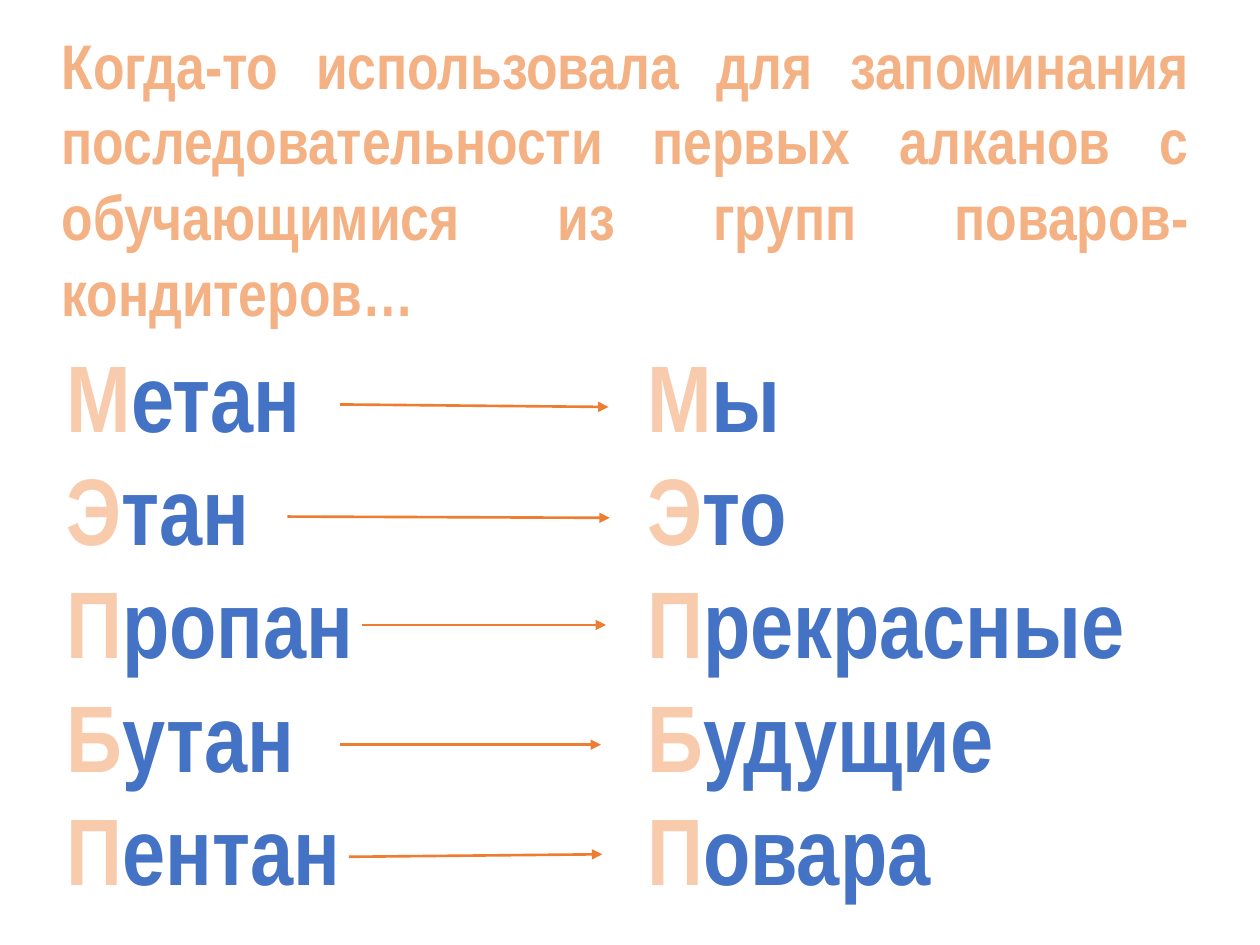
from dataclasses import dataclass

from lxml import etree
from pptx import Presentation
from pptx import util as u
from pptx.dml.color import RGBColor
from pptx.enum import shapes, text
from pptx.oxml import ns
from pptx.util import Inches


@dataclass(frozen=True)
class Theme:
    font: str = "Arial Narrow"
    title: str = "F4B183"
    initial: str = "F8CBAD"
    word: str = "4472C4"
    accent: str = "ED7D31"
    edge: str = "FFFFFF"
    title_size: int = 36
    word_size: int = 54


T = Theme()

TITLE = ("Когда-то использовала для запоминания последовательности первых "
         "алканов с обучающимися из групп поваров-кондитеров…")
# alkane, mnemonic word, arrow start (x, y), arrow end (x, y)
ROWS = [
    ("Метан", "Мы", (2.7, 3.21), (4.83, 3.23)),
    ("Этан", "Это", (2.28, 4.1), (4.84, 4.11)),
    ("Пропан", "Прекрасные", (2.87, 4.96), (4.81, 4.96)),
    ("Бутан", "Будущие", (2.7, 5.91), (4.77, 5.91)),
    ("Пентан", "Повара", (2.77, 6.8), (4.78, 6.78)),
]


def add_run(p, words, size, color, edge, edge_width):
    """Add a bold run whose letters have a coloured outline."""
    r = p.add_run()
    r.text = words
    for name, value in dict(name=T.font, size=u.Pt(size), bold=True).items():
        setattr(r.font, name, value)
    r.font.color.rgb = RGBColor.from_string(color)
    ln = etree.Element(ns.qn("a:ln"), w=str(u.Pt(edge_width)))
    fill = etree.SubElement(ln, ns.qn("a:solidFill"))
    etree.SubElement(fill, ns.qn("a:srgbClr"), val=edge)
    r.font._element.insert(0, ln)


def add_box(s, box):
    tf = s.shapes.add_textbox(*map(Inches, box)).text_frame
    tf.word_wrap = True
    tf.auto_size = text.MSO_AUTO_SIZE.SHAPE_TO_FIT_TEXT
    return tf


def add_title(s, box):
    p = add_box(s, box).paragraphs[0]
    p.alignment = text.PP_ALIGN.JUSTIFY
    add_run(p, TITLE, T.title_size, T.title, T.accent, 1.75)


def add_word_column(s, box, words):
    """List the words, one a line, with the first letter picked out."""
    tf = add_box(s, box)
    for i, word in enumerate(words):
        p = tf.add_paragraph() if i else tf.paragraphs[0]
        add_run(p, word[0], T.word_size, T.initial, T.accent, 1.75)
        add_run(p, word[1:], T.word_size, T.word, T.edge, 0.75)


def add_arrow(s, start, end):
    c = s.shapes.add_connector(shapes.MSO_CONNECTOR.STRAIGHT,
                               *map(Inches, start + end))
    c.line.width = u.Pt(1.5)
    c.line.color.rgb = RGBColor.from_string(T.accent)
    etree.SubElement(c.line._get_or_add_ln(), ns.qn("a:tailEnd"), type="triangle")
    etree.SubElement(c._element.spPr, ns.qn("a:effectLst"))


def main():
    prs = Presentation()
    prs.slide_width, prs.slide_height = Inches(10), Inches(7.5)
    s = prs.slides.add_slide(prs.slide_layouts[6])
    alkanes, mnemonics, starts, ends = zip(*ROWS)
    add_word_column(s, (5.04, 2.63, 4.96, 4.64), mnemonics)
    add_title(s, (0.39, 0.16, 9.15, 2.52))
    add_word_column(s, (0.43, 2.63, 3.32, 4.64), alkanes)
    for start, end in zip(starts, ends):
        add_arrow(s, start, end)
    prs.save("out.pptx")


if __name__ == "__main__":
    main()
